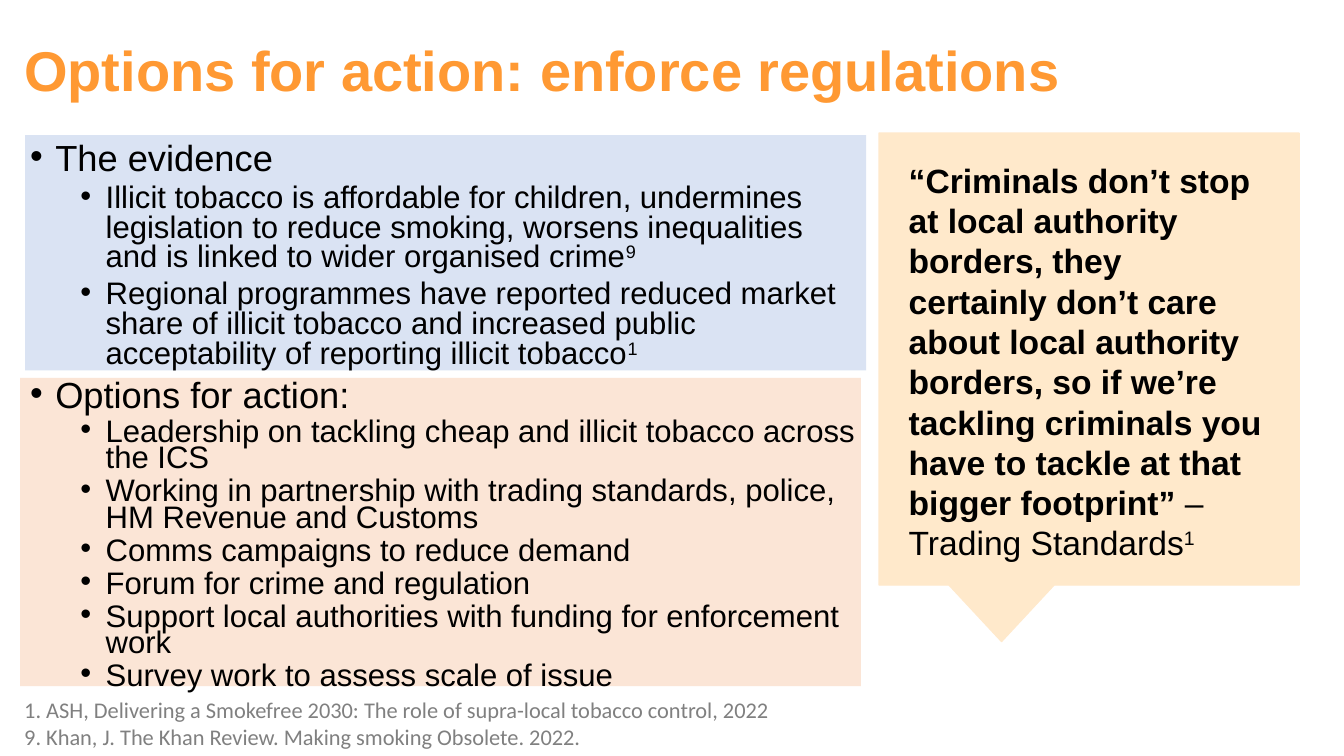
from dataclasses import dataclass

from lxml import etree
from pptx import Presentation
from pptx.dml.color import RGBColor
from pptx.enum.shapes import MSO_SHAPE
from pptx.enum.text import MSO_ANCHOR
from pptx.oxml.ns import qn
from pptx.util import Inches, Pt

RECTANGLE = MSO_SHAPE.RECTANGLE
CALLOUT = MSO_SHAPE.RECTANGULAR_CALLOUT
TOP, MIDDLE = MSO_ANCHOR.TOP, MSO_ANCHOR.MIDDLE
COLUMNS, ROWS = 160, 90


@dataclass(frozen=True)
class Theme:
    orange: str = "FF9933"
    evidence: str = "DAE3F3"
    options: str = "FBE5D6"
    quote: str = "FFE9CB"
    text: str = "000000"
    grey: str = "808080"
    font: str = "Arial"
    source_font: str = "Calibri"
    title_size: float = 40
    heading_size: float = 25.9
    item_size: float = 22.2
    quote_size: float = 24
    source_size: float = 16


class SlideBuilder:
    """Draws styled elements on one slide laid out on a 160 by 90 grid."""

    def __init__(self, presentation, theme):
        self.theme = theme
        self.column = presentation.slide_width / COLUMNS
        self.row = presentation.slide_height / ROWS
        self.slide = presentation.slides.add_slide(presentation.slide_layouts[6])

    def place(self, left, top, width, height):
        return (round(left * self.column), round(top * self.row),
                round(width * self.column), round(height * self.row))

    def panel(self, kind, area, color):
        shape = self.slide.shapes.add_shape(kind, *self.place(*area))
        shape.shadow.inherit = False
        shape.fill.solid()
        shape.fill.fore_color.rgb = RGBColor.from_string(color)
        shape.line.fill.background()
        return shape

    def text_box(self, area, anchor=TOP, wrap=True):
        frame = self.slide.shapes.add_textbox(*self.place(*area)).text_frame
        frame.word_wrap = wrap
        frame.vertical_anchor = anchor
        return frame

    def paragraph(self, frame):
        first = frame.paragraphs[0]
        return frame.add_paragraph() if first.runs else first

    def run(self, paragraph, text, size, color=None, font=None, bold=False, raised=False):
        run = paragraph.add_run()
        run.text = text
        run.font.size = Pt(size)
        run.font.name = font or self.theme.font
        run.font.bold = bold
        run.font.color.rgb = RGBColor.from_string(color or self.theme.text)
        if raised:
            run.font._element.set("baseline", "30000")

    def bullet(self, frame, text, size, level, spacing, before, note=""):
        is_first = not frame.paragraphs[0].runs
        paragraph = self.paragraph(frame)
        properties = paragraph._p.get_or_add_pPr()
        properties.set("marL", str(Inches(0.25 + 0.5 * level)))
        properties.set("indent", str(-Inches(0.25)))
        etree.SubElement(properties, qn("a:buFont")).set("typeface", self.theme.font)
        etree.SubElement(properties, qn("a:buChar")).set("char", "•")
        paragraph.level = level
        paragraph.line_spacing = spacing
        paragraph.space_before = Pt(0 if is_first else before)
        self.run(paragraph, text, size)
        if note:
            self.run(paragraph, note, size, raised=True)

    def section(self, frame, heading, items, spacing):
        self.bullet(frame, heading, self.theme.heading_size, 0, 0.7, 10)
        for text, note in items:
            self.bullet(frame, text, self.theme.item_size, 1, spacing, 5, note)


EVIDENCE = [
    ("Illicit tobacco is affordable for children, undermines legislation to reduce "
     "smoking, worsens inequalities and is linked to wider organised crime", "9"),
    ("Regional programmes have reported reduced market share of illicit tobacco and "
     "increased public acceptability of reporting illicit tobacco", "1"),
]
OPTIONS = [
    ("Leadership on tackling cheap and illicit tobacco across the ICS", ""),
    ("Working in partnership with trading standards, police, HM Revenue and Customs", ""),
    ("Comms campaigns to reduce demand", ""),
    ("Forum for crime and regulation", ""),
    ("Support local authorities with funding for enforcement work", ""),
    ("Survey work to assess scale of issue", ""),
]
QUOTE = ("“Criminals don’t stop at local authority borders, they certainly don’t care "
         "about local authority borders, so if we’re tackling criminals you have to "
         "tackle at that bigger footprint” ")
SOURCES = [
    "1. ASH, Delivering a Smokefree 2030: The role of supra-local tobacco control, 2022",
    "9. Khan, J. The Khan Review. Making smoking Obsolete. 2022.",
]


def main():
    theme = Theme()
    presentation = Presentation()
    presentation.slide_width = Inches(13.33)
    presentation.slide_height = Inches(7.5)
    builder = SlideBuilder(presentation, theme)

    builder.panel(RECTANGLE, (2.4, 45, 100.1, 36.7), theme.options)
    builder.panel(RECTANGLE, (3, 16.1, 100.1, 28), theme.evidence)
    callout = builder.panel(CALLOUT, (104.65, 15.85, 50, 53.8), theme.quote)
    callout.line.color.rgb = RGBColor.from_string(theme.quote)
    callout.line.width = Pt(1)

    title = builder.text_box((1.7, 0, 138, 17.4), MIDDLE).paragraphs[0]
    title.line_spacing = 0.9
    builder.run(title, "Options for action: enforce regulations",
                theme.title_size, theme.orange, bold=True)

    body = builder.text_box((2.4, 16.9, 101.1, 69.6))
    builder.section(body, "The evidence", EVIDENCE, 0.8)
    builder.section(body, "Options for action:", OPTIONS, 0.7)

    quote = builder.text_box((107, 18.4, 44.4, 49.7)).paragraphs[0]
    builder.run(quote, QUOTE, theme.quote_size, bold=True)
    builder.run(quote, "– Trading Standards", theme.quote_size)
    builder.run(quote, "1", theme.quote_size, raised=True)

    sources = builder.text_box((1.7, 82.3, 92.2, 7.7), wrap=False)
    for source in SOURCES:
        builder.run(builder.paragraph(sources), source, theme.source_size,
                    theme.grey, theme.source_font)

    presentation.save("out.pptx")


if __name__ == "__main__":
    main()
